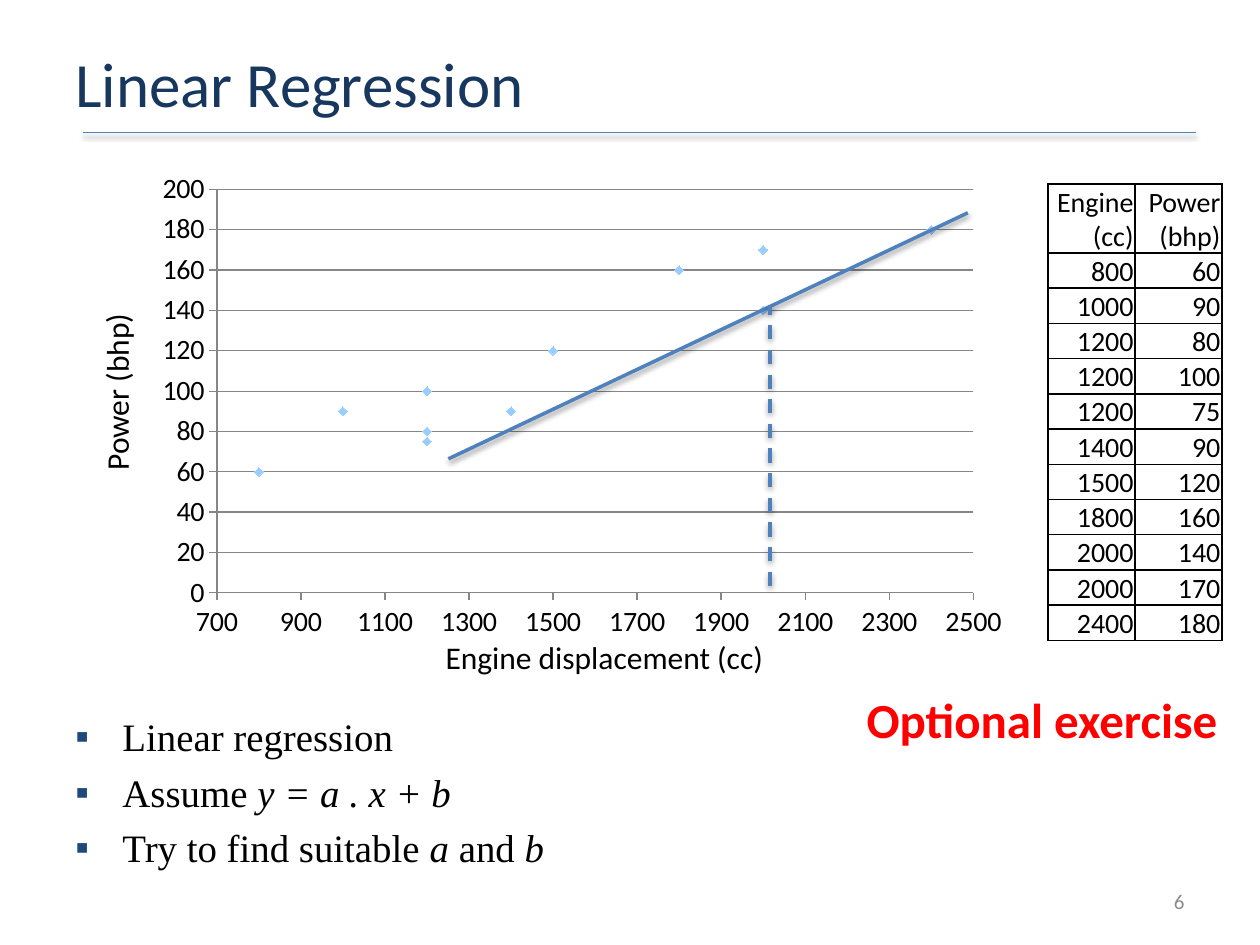
from pptx import Presentation
from pptx.chart.data import XyChartData
from pptx.dml.color import RGBColor
from pptx.enum.chart import XL_CHART_TYPE, XL_MARKER_STYLE, XL_TICK_MARK
from pptx.enum.dml import MSO_LINE
from pptx.enum.shapes import MSO_CONNECTOR
from pptx.enum.text import MSO_ANCHOR, PP_ALIGN
from pptx.oxml import parse_xml
from pptx.oxml.ns import nsdecls
from pptx.util import Cm, Pt

LEFT, CENTER, RIGHT = PP_ALIGN.LEFT, PP_ALIGN.CENTER, PP_ALIGN.RIGHT
TOP, MIDDLE, BOTTOM = MSO_ANCHOR.TOP, MSO_ANCHOR.MIDDLE, MSO_ANCHOR.BOTTOM
SCATTER = XL_CHART_TYPE.XY_SCATTER
DIAMOND = XL_MARKER_STYLE.DIAMOND
TICK_OUTSIDE, TICK_NONE = XL_TICK_MARK.OUTSIDE, XL_TICK_MARK.NONE
STRAIGHT = MSO_CONNECTOR.STRAIGHT
DASH = MSO_LINE.DASH

COLORS = {
    "title": "17375E", "line": "4F81BD", "marker": "99CCFF", "bullet": "1F497D",
    "grid": "868686", "number": "8C8C8C", "alert": "FF0000", "text": "000000",
}
ENGINES = [
    (800, 60), (1000, 90), (1200, 80), (1200, 100), (1200, 75), (1400, 90),
    (1500, 120), (1800, 160), (2000, 140), (2000, 170), (2400, 180),
]


def rgb(name):
    return RGBColor.from_string(COLORS[name])


def write(paragraph, text, size=18, color="text", font="Calibri", bold=False, align=LEFT):
    """Fill a paragraph, setting the parts between asterisks in italics."""
    paragraph.alignment = align
    for index, part in enumerate(text.split("*")):
        if part:
            run = paragraph.add_run()
            run.text = part
            run.font.size = Pt(size)
            run.font.name = font
            run.font.bold = bold
            run.font.italic = index % 2 == 1
            run.font.color.rgb = rgb(color)


class SlideBuilder:
    """Hold the style and the current slide, and draw elements on it."""

    def __init__(self, slide):
        self.slide = slide

    def text(self, box, text, anchor=TOP, rotation=0, **style):
        shape = self.slide.shapes.add_textbox(*map(Cm, box))
        shape.rotation = rotation
        frame = shape.text_frame
        frame.word_wrap = True
        frame.vertical_anchor = anchor
        write(frame.paragraphs[0], text, **style)
        return frame

    def bullets(self, box, items, **style):
        frame = self.text(box, items[0], **style)
        for item in items[1:]:
            write(frame.add_paragraph(), item, **style)
        for paragraph in frame.paragraphs:
            paragraph.space_before = Pt(5)
            properties = paragraph._p.get_or_add_pPr()
            properties.set("marL", str(Cm(0.95)))
            properties.set("indent", str(-Cm(0.95)))
            for xml in (
                f'<a:buClr {nsdecls("a")}><a:srgbClr val="{COLORS["bullet"]}"/></a:buClr>',
                f'<a:buFont {nsdecls("a")} typeface="Arial"/>',
                f'<a:buChar {nsdecls("a")} char="▪"/>',
            ):
                properties.append(parse_xml(xml))

    def line(self, start, end, width, dash=None):
        connector = self.slide.shapes.add_connector(STRAIGHT, *map(Cm, start + end))
        connector.line.color.rgb = rgb("line")
        connector.line.width = Pt(width)
        if dash:
            connector.line.dash_style = dash
        connector._element.spPr.append(parse_xml(
            f'<a:effectLst {nsdecls("a")}><a:outerShdw blurRad="40000" dist="20000" '
            'dir="5400000" rotWithShape="0"><a:srgbClr val="000000">'
            '<a:alpha val="38000"/></a:srgbClr></a:outerShdw></a:effectLst>'))

    def scatter(self, box, points, plot_area):
        data = XyChartData()
        series_data = data.add_series("Series 1")
        for x, y in points:
            series_data.add_data_point(x, y)
        chart = self.slide.shapes.add_chart(SCATTER, *map(Cm, box), data).chart
        chart.has_legend = chart.has_title = False
        chart.font.name = "Calibri"
        chart.font.size = Pt(16)
        chart.font.color.rgb = rgb("text")
        chart.plots[0].vary_by_categories = False
        series = chart.plots[0].series[0]
        series.smooth = False
        series.format.line.fill.background()
        series.marker.style = DIAMOND
        series.marker.size = 5
        series.marker.format.fill.solid()
        series.marker.format.fill.fore_color.rgb = rgb("marker")
        series.marker.format.line.fill.background()
        self.axis(chart.category_axis, 700, 2500, 200)
        self.axis(chart.value_axis, 0, 200, 20, gridlines=True)
        layout = "".join(
            f'<c:{name} val="{value}"/>' for name, value in zip("xywh", plot_area))
        plot = chart._chartSpace.chart.plotArea
        for old in plot.findall(plot.tag.replace("plotArea", "layout")):
            plot.remove(old)
        plot.insert(0, parse_xml(
            f'<c:layout {nsdecls("c")}><c:manualLayout><c:layoutTarget val="inner"/>'
            f'<c:xMode val="edge"/><c:yMode val="edge"/>{layout}'
            '</c:manualLayout></c:layout>'))

    def axis(self, axis, minimum, maximum, step, gridlines=False):
        axis.minimum_scale, axis.maximum_scale = minimum, maximum
        axis.major_unit = step
        axis.major_tick_mark, axis.minor_tick_mark = TICK_OUTSIDE, TICK_NONE
        axis.has_title = False
        axis.has_major_gridlines = gridlines
        axis.tick_labels.font.size = Pt(16)
        axis.format.line.color.rgb = rgb("grid")
        if gridlines:
            axis.major_gridlines.format.line.color.rgb = rgb("grid")

    def table(self, box, rows, header_height, row_height):
        table = self.slide.shapes.add_table(len(rows), len(rows[0]), *map(Cm, box)).table
        table.first_row = table.horz_banding = False
        for row_index, values in enumerate(rows):
            table.rows[row_index].height = Cm(row_height if row_index else header_height)
            for column_index, value in enumerate(values):
                self.cell(table.cell(row_index, column_index), str(value))

    def cell(self, cell, text):
        cell.margin_left = cell.margin_right = cell.margin_top = Cm(0.03)
        cell.margin_bottom = 0
        cell.vertical_anchor = BOTTOM
        cell.fill.background()
        write(cell.text_frame.paragraphs[0], text, size=16, align=RIGHT)
        properties = cell._tc.get_or_add_tcPr()
        for index, side in enumerate("LRTB"):
            properties.insert(index, parse_xml(
                f'<a:ln{side} {nsdecls("a")} w="{Pt(1)}"><a:solidFill>'
                f'<a:srgbClr val="{COLORS["text"]}"/></a:solidFill></a:ln{side}>'))


def main():
    presentation = Presentation()
    presentation.slide_width, presentation.slide_height = Cm(25.4), Cm(19.05)
    builder = SlideBuilder(presentation.slides.add_slide(presentation.slide_layouts[6]))

    builder.line((1.68, 2.67), (24.1, 2.67), 1)
    builder.text((1.27, 0.76, 22.86, 1.8), "Linear Regression", MIDDLE, size=36, color="title")
    builder.text((18.21, 17.65, 5.92, 1.02), "6", MIDDLE, size=12, color="number", align=RIGHT)

    builder.scatter((2.97, 3.33, 17.53, 9.8), ENGINES, (0.08, 0.05, 0.87, 0.83))
    builder.text((7.98, 12.73, 8.41, 1.07), "Engine displacement (cc)", align=CENTER)
    builder.text((-1.83, 7.37, 8.41, 1.07), "Power (bhp)", rotation=270, align=CENTER)

    builder.bullets(
        (1.27, 14.25, 22.86, 3.4),
        ["Linear regression", "Assume *y = a . x + b*", "Try to find suitable *a *and *b*"],
        size=22.2, font="Times New Roman")

    builder.line((9.04, 9.25), (19.51, 4.29), 2)
    builder.line((15.52, 11.81), (15.52, 6.15), 2, DASH)
    builder.text((15.93, 13.77, 8.86, 1.45), "Optional exercise",
                 size=28, color="alert", bold=True, align=RIGHT)
    builder.table((21.13, 3.71, 3.5, 9.22), [("Engine (cc)", "Power (bhp)")] + ENGINES, 1.39, 0.71)

    presentation.save("out.pptx")


if __name__ == "__main__":
    main()
